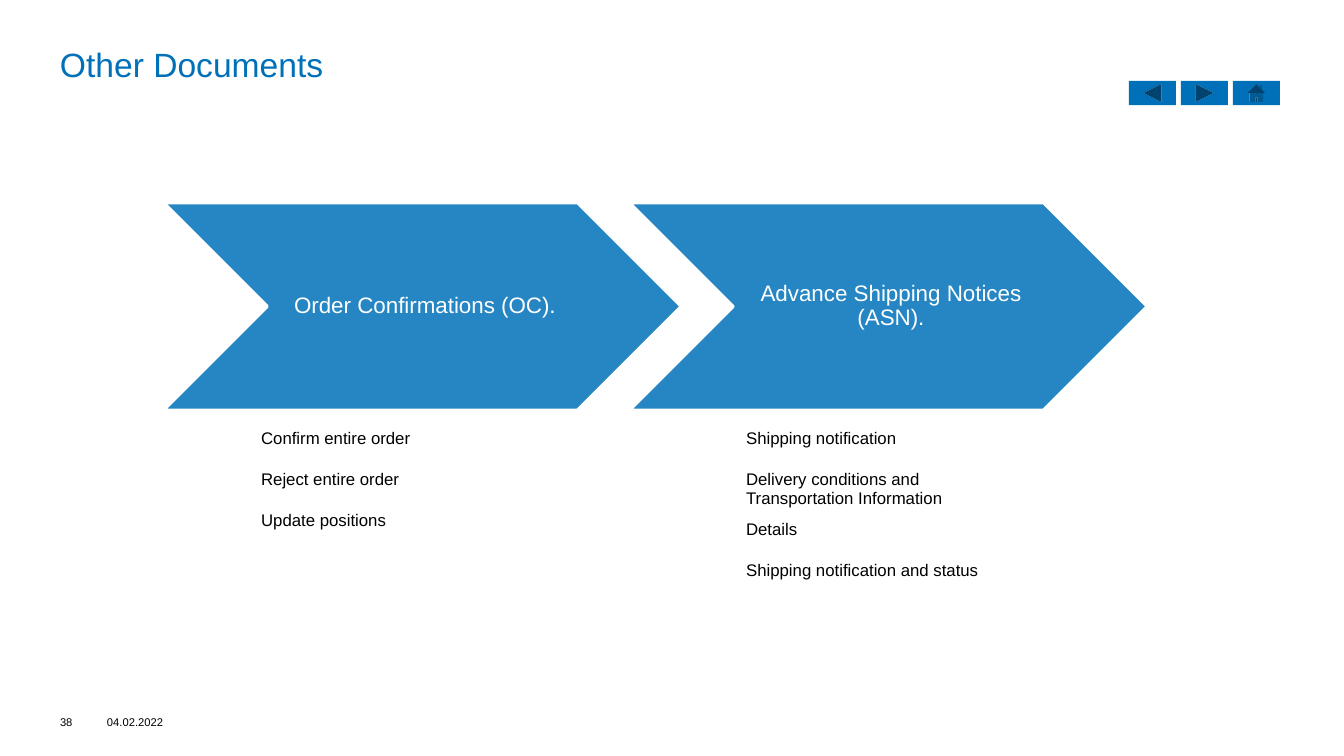
from dataclasses import dataclass

from pptx import Presentation, util as u
from pptx.dml.color import RGBColor
from pptx.enum import shapes, text

PX = 914400 / 100.8  # EMU in one px


@dataclass(frozen=True)
class Theme:
    font: str = "Arial"
    blue: str = "0071B9"
    arrow: str = "2586C3"
    white: str = "FFFFFF"
    black: str = "000000"
    title: int = 24
    label: int = 16
    body: int = 12
    footer: int = 8


THEME = Theme()


def px(*lengths):
    return [u.Emu(round(length * PX)) for length in lengths]


def color(code):
    return RGBColor.from_string(code)


def style(frame, size, code):
    for para in frame.paragraphs:
        for span in para.runs:
            span.font.name = THEME.font
            span.font.size = u.Pt(size)
            span.font.color.rgb = color(code)


def add_text(page, box, words, size, code,
             anchor=text.MSO_ANCHOR.TOP, insets=(0, 0, 0, 0)):
    frame = page.shapes.add_textbox(*px(*box)).text_frame
    frame.word_wrap = True
    frame.vertical_anchor = anchor
    (frame.margin_left, frame.margin_top,
     frame.margin_right, frame.margin_bottom) = px(*insets)
    frame.text = words
    style(frame, size, code)
    return frame


def add_plain_shape(page, kind, box, fill):
    shape = page.shapes.add_shape(kind, *px(*box))
    shape.shadow.inherit = False
    shape.fill.solid()
    shape.fill.fore_color.rgb = color(fill)
    shape.line.fill.background()
    return shape


def add_footer(page, box):
    left, top, width, height = box
    date_offset = 47
    for words, offset, span_width in (
            ("38", 0, 39), ("04.02.2022", date_offset, width - date_offset)):
        add_text(page, (left + offset, top, span_width, height), words,
                 THEME.footer, THEME.black, text.MSO_ANCHOR.BOTTOM)


def add_step(page, box, words):
    left, top, width, height = box
    chevron = add_plain_shape(page, shapes.MSO_SHAPE.CHEVRON, box, THEME.arrow)
    chevron.line.color.rgb = color(THEME.white)
    chevron.line.width = u.Pt(2)
    # The label sits between the notch and the point
    notch = height // 2
    frame = add_text(page, (left + notch, top, width - 2 * notch, height),
                     words, THEME.label, THEME.white,
                     text.MSO_ANCHOR.MIDDLE, (7, 2, 2, 2))
    para = frame.paragraphs[0]
    para.alignment = text.PP_ALIGN.CENTER
    para.line_spacing = 0.9


def add_details(page, box, entries):
    left, top, width, row_height = box
    heights = [row_height + 6 * entry.count("\n") for entry in entries]
    table = page.shapes.add_table(
        len(entries), 1, *px(left, top, width, sum(heights))).table
    table.first_row = table.horz_banding = False
    for row, entry, height in zip(table.rows, entries, heights):
        row.height = px(height)[0]
        cell = row.cells[0]
        cell.fill.background()
        cell.text_frame.text = entry
        style(cell.text_frame, THEME.body, THEME.black)


def add_navigation(page, box):
    left, top, width, height = box
    kinds = (shapes.MSO_SHAPE.ACTION_BUTTON_BACK_OR_PREVIOUS,
             shapes.MSO_SHAPE.ACTION_BUTTON_FORWARD_OR_NEXT,
             shapes.MSO_SHAPE.ACTION_BUTTON_HOME)
    gap = 5
    button_width = (width - gap * (len(kinds) - 1)) // len(kinds)
    for index, kind in enumerate(kinds):
        add_plain_shape(page, kind,
                        (left + index * (button_width + gap), top,
                         button_width, height), THEME.blue)


def main():
    deck = Presentation()
    deck.slide_width, deck.slide_height = px(1344, 756)
    page = deck.slides.add_slide(deck.slide_layouts[6])

    # Title and footer
    add_text(page, (60, 44, 1222, 47), "Other Documents",
             THEME.title, THEME.blue)
    add_footer(page, (60, 690, 119, 39))

    # Document types
    for index, words in enumerate(("Order Confirmations (OC).",
                                   "Advance Shipping Notices (ASN).")):
        add_step(page, (164 + index * 466, 203, 517, 207), words)

    # Details under each type
    add_details(page, (251, 424, 262, 41),
                ("Confirm entire order", "Reject entire order",
                 "Update positions"))
    add_details(page, (736, 424, 301, 41),
                ("Shipping notification",
                 "Delivery conditions and\nTransportation Information",
                 "Details", "Shipping notification and status"))

    # Navigation buttons
    add_navigation(page, (1129, 81, 151, 24))

    deck.save("out.pptx")


if __name__ == "__main__":
    main()
